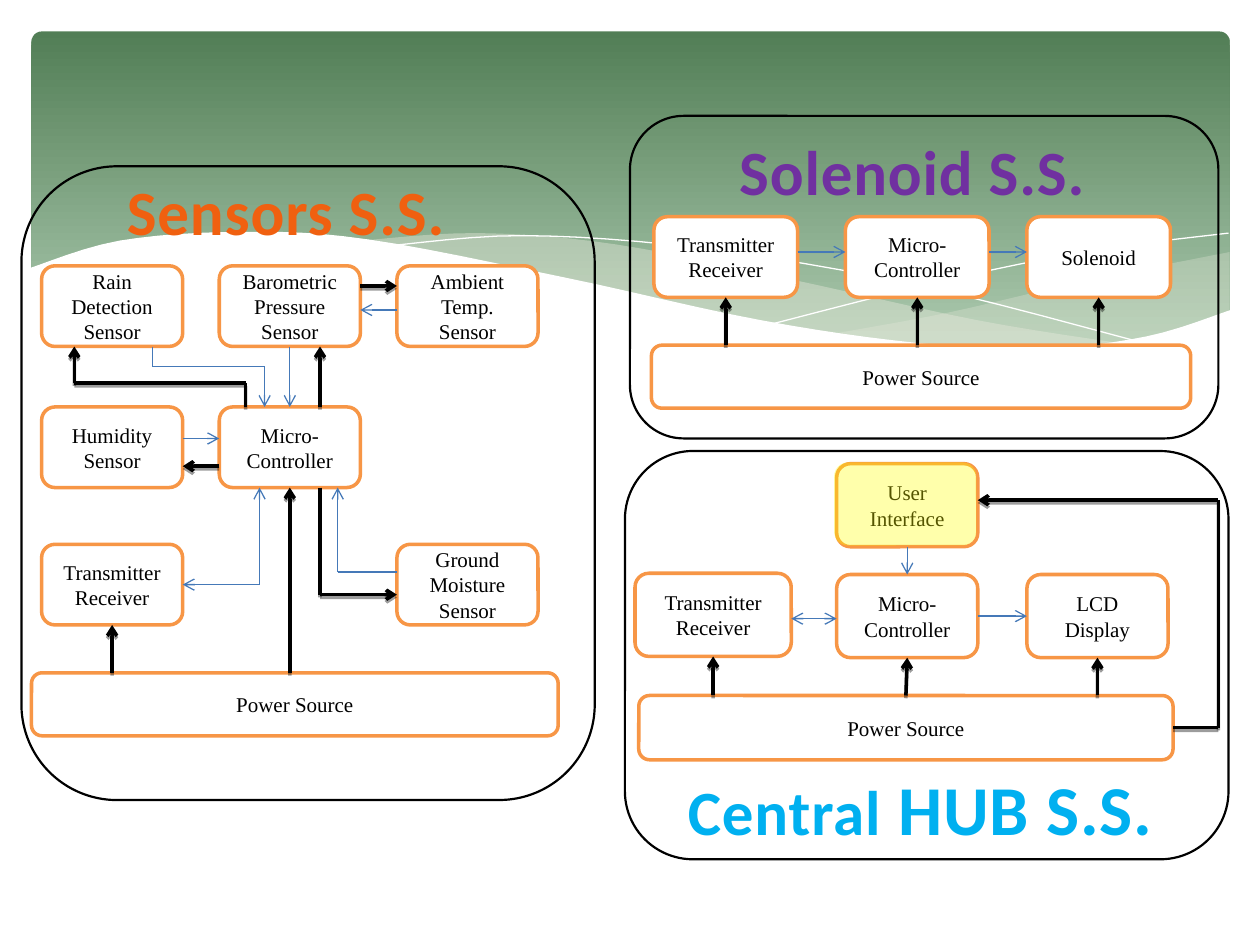
from lxml import etree
from pptx import Presentation
from pptx.dml.color import RGBColor
from pptx.enum.shapes import MSO_CONNECTOR, MSO_SHAPE
from pptx.enum.text import MSO_ANCHOR, MSO_AUTO_SIZE, PP_ALIGN
from pptx.oxml.ns import qn
from pptx.util import Cm, Pt

ROUNDED = MSO_SHAPE.ROUNDED_RECTANGLE
STRAIGHT = MSO_CONNECTOR.STRAIGHT
TOP, LEFT, BOTTOM, RIGHT = range(4)
OPPOSITE = {TOP: BOTTOM, BOTTOM: TOP, LEFT: RIGHT, RIGHT: LEFT}
ORANGE, BLACK, WHITE, BLUE = "F79646", "000000", "FFFFFF", "4579B8"

# All places are in inches: left, top, width, height.
BANNER = (0.25, 0.25, 9.51, 2.7)
BANNER_STOPS = [(0, "527E56"), (0.9, "AAC8AD")]

# Waves: smooth edges through a few points, fill (None for a line), opacity
WAVES = [
    ([[(9.76, 2), (8.61, 2.23), (7.53, 2.48), (6.61, 2.65)],
      [(6.61, 2.65), (7.45, 2.75), (8.35, 2.77), (9.13, 2.67), (9.76, 2.47)]], "EAEBDE", 29),
    ([[(2.86, 1.91), (3.8, 1.85), (4.89, 1.94), (6.29, 2.22), (7.75, 2.54), (8.93, 2.73)],
      [(8.93, 2.73), (7.96, 2.78), (6.65, 2.66), (4.49, 2.22), (2.86, 1.91)]], "EAEBDE", 40),
    ([[(3.09, 1.95), (4.16, 1.87), (5.56, 1.97), (7.27, 2.26), (9.07, 2.72)]], None, 100),
    ([[(6.13, 2.57), (7.48, 2.23), (8.66, 1.99), (9.75, 1.85)]], None, 100),
    ([[(0.23, 2.13), (0.95, 1.91), (1.93, 1.84), (2.92, 1.9), (4.47, 2.2), (6.03, 2.54),
       (7.26, 2.72), (8.23, 2.77), (9.1, 2.67), (9.77, 2.46)],
      [(9.77, 3.29), (0.23, 3.29)]], WHITE, 100),
]
CURVE_STEPS = 6

RADIO, MICRO, POWER = "Transmitter\nReceiver", "Micro-Controller", "Power Source"
SENSOR_COLUMNS = [0.33, 1.74, 3.15]
SENSOR_ROWS = [2.11, 3.23, 4.32]
SENSOR_SIZE = (1.12, 0.64)
SENSOR_GRID = [
    [("rain", "Rain Detection\nSensor"), ("barometer", "Barometric Pressure Sensor"),
     ("ambient", "Ambient Temp.\nSensor")],
    [("humidity", "Humidity\nSensor"), ("sensor micro", MICRO), None],
    [("sensor radio", RADIO), None, ("ground", "Ground Moisture\nSensor")],
]
OTHER_BOXES = [
    ("sensor power", POWER, (0.25, 5.34, 4.18, 0.5)),
    ("solenoid radio", RADIO, (5.19, 1.72, 1.14, 0.64)),
    ("solenoid micro", MICRO, (6.71, 1.72, 1.14, 0.64)),
    ("solenoid", "Solenoid", (8.15, 1.72, 1.14, 0.64)),
    ("solenoid power", POWER, (5.17, 2.74, 4.28, 0.5)),
    ("user", "User Interface", (6.64, 3.68, 1.12, 0.66)),
    ("hub micro", MICRO, (6.64, 4.56, 1.12, 0.66)),
    ("lcd", "LCD Display", (8.15, 4.56, 1.12, 0.66)),
    ("hub radio", RADIO, (5.04, 4.55, 1.24, 0.66)),
    ("hub power", POWER, (5.07, 5.52, 4.24, 0.51)),
]

POWER_LOOK = {"colour": BLACK, "width": 2, "shadow": True}
DATA_LOOK = {"colour": BLUE, "width": 0.75}
TWO_WAY_LOOK = {**DATA_LOOK, "two_way": True}

# Straight links: from, side it leaves by, to, shift from the middle of the target
LINKS = [
    (POWER_LOOK, [
        ("sensor power", TOP, "sensor radio", 0), ("sensor power", TOP, "sensor micro", 0),
        ("solenoid power", TOP, "solenoid radio", 0),
        ("solenoid power", TOP, "solenoid micro", 0), ("solenoid power", TOP, "solenoid", 0),
        ("hub power", TOP, "hub radio", 0), ("hub power", TOP, "hub micro", 0),
        ("hub power", TOP, "lcd", 0), ("sensor micro", LEFT, "humidity", 0.15),
        ("sensor micro", TOP, "barometer", 0.24), ("barometer", RIGHT, "ambient", -0.16)]),
    (DATA_LOOK, [
        ("barometer", BOTTOM, "sensor micro", 0), ("humidity", RIGHT, "sensor micro", -0.07),
        ("ambient", LEFT, "barometer", 0.03), ("solenoid radio", RIGHT, "solenoid micro", -0.04),
        ("solenoid micro", RIGHT, "solenoid", -0.04), ("hub micro", RIGHT, "lcd", 0),
        ("user", BOTTOM, "hub micro", 0)]),
    (TWO_WAY_LOOK, [("hub radio", RIGHT, "hub micro", 0.02)]),
]
# Bent routes: from, side, shift from its middle, then the x or y of each turn
BENT_ROUTES = [
    (POWER_LOOK, "sensor micro", BOTTOM, 0.24, [4.72, 3.15]),
    (POWER_LOOK, "sensor micro", TOP, -0.35, [3.04, 0.59, 2.75]),
    (POWER_LOOK, "hub power", RIGHT, 0, [9.67, 3.97, 7.76]),
    (DATA_LOOK, "rain", BOTTOM, 0.32, [2.91, 2.1, 3.23]),
    (DATA_LOOK, "ground", LEFT, -0.1, [2.68, 3.87]),
    (TWO_WAY_LOOK, "sensor radio", RIGHT, 0, [2.06, 3.87]),
]

# Headings: place, colour, runs of text and size
HEADINGS = [
    ((0.89, 1.32, 2.76, 0.68), "F06010", [("Sensors S.S.", 36)]),
    ((5.36, 6.03, 3.89, 0.74), "00B0F0", [("Central", 36), (" HUB S.S.", 40)]),
    ((5.76, 1, 2.96, 0.68), "7030A0", [("Solenoid S.S.", 36)]),
]
FRAMES = [(0.17, 1.32, 4.55, 5.03), (5, 0.92, 4.67, 2.56), (4.96, 3.58, 4.79, 3.24)]
HIGHLIGHT = (6.62, 3.67, 1.13, 0.66)


def lengths(values):
    return [Cm(value * 2.54) for value in values]


def smooth(points):
    """Return points along a Catmull-Rom curve; two points stay a straight line."""
    if len(points) == 2:
        return points
    padded = [points[0], *points, points[-1]]
    curve = [points[0]]
    for corners in zip(padded, padded[1:], padded[2:], padded[3:]):
        for step in range(1, CURVE_STEPS + 1):
            t = step / CURVE_STEPS
            curve.append(tuple(
                b + t * (c - a + t * (2 * a - 5 * b + 4 * c - d + t * (3 * (b - c) + d - a))) / 2
                for a, b, c, d in zip(*corners)))
    return curve


def paint(fill, colour, opacity=100):
    if colour is None:
        fill.background()
        return
    fill.solid()
    fill.fore_color.rgb = RGBColor.from_string(colour)
    if opacity < 100:
        rgb = fill._xPr.find(".//" + qn("a:srgbClr"))
        etree.SubElement(rgb, qn("a:alpha"), val=str(opacity * 1000))


def style(shape, fill=None, line=None, width=0, opacity=100):
    shape.shadow.inherit = False
    paint(shape.fill, fill, opacity)
    paint(shape.line.fill, line)
    if line:
        shape.line.width = Pt(width)
    return shape


def add_rounded(place, **look):
    return style(slide.shapes.add_shape(ROUNDED, *lengths(place)), **look)


def write(paragraph, text, font="Times New Roman", size=12, colour=BLACK, bold=False, spacing=0):
    """Add text to a paragraph; each newline is a line break."""
    for index, line in enumerate(text.split("\n")):
        if index:
            paragraph.add_line_break()
        run = paragraph.add_run()
        run.text = line
        run.font.name, run.font.size, run.font.bold = font, Pt(size), bold
        paint(run.font.fill, colour)
        if spacing:
            run._r.get_or_add_rPr().set("spc", str(spacing))
    paragraph.alignment = PP_ALIGN.CENTER


def side_point(name, side, shift=0):
    left, top, width, height = places[name]
    if side in (TOP, BOTTOM):
        return left + width / 2 + shift, top + height * (side == BOTTOM)
    return left + width * (side == RIGHT), top + height / 2 + shift


def add_line(start, end, colour, width, shadow=False, head=False, tail=False):
    connector = slide.shapes.add_connector(STRAIGHT, *lengths((*start, *end)))
    paint(connector.line.fill, colour)
    connector.line.width = Pt(width)
    for tag, wanted in (("a:headEnd", head), ("a:tailEnd", tail)):
        if wanted:
            etree.SubElement(connector.line._get_or_add_ln(), qn(tag), type="arrow")
    effects = etree.SubElement(connector._element.spPr, qn("a:effectLst"))
    if shadow:
        outer = etree.SubElement(effects, qn("a:outerShdw"), dist="20000", dir="5400000")
        rgb = etree.SubElement(outer, qn("a:srgbClr"), val=BLACK)
        etree.SubElement(rgb, qn("a:alpha"), val="38000")
    return connector


def add_link(source, side, target, shift, two_way=False, **look):
    end = side_point(target, OPPOSITE[side], shift)
    middle = side_point(source, side)
    start = (end[0], middle[1]) if side in (TOP, BOTTOM) else (middle[0], end[1])
    connector = add_line(start, end, head=two_way, tail=True, **look)
    if shift == 0:
        connector.end_connect(boxes[target], OPPOSITE[side])
        if max(abs(a - b) for a, b in zip(start, middle)) < 0.01:
            connector.begin_connect(boxes[source], side)


def add_bent_route(source, side, shift, turns, two_way=False, **look):
    start = side_point(source, side, shift)
    vertical = side in (TOP, BOTTOM)
    for index, turn in enumerate(turns):
        end = (start[0], turn) if vertical else (turn, start[1])
        connector = add_line(start, end, head=two_way and index == 0,
                             tail=index == len(turns) - 1, **look)
        if index == 0 and shift == 0:
            connector.begin_connect(boxes[source], side)
        start, vertical = end, not vertical


presentation = Presentation()
presentation.slide_width, presentation.slide_height = lengths((10, 7.5))
slide = presentation.slides.add_slide(presentation.slide_layouts[6])

banner = add_rounded(BANNER)
banner.adjustments[0] = 0.03
banner.fill.gradient()
banner.fill.gradient_angle = 270
for stop, (position, colour) in zip(banner.fill.gradient_stops, BANNER_STOPS):
    stop.position = position
    stop.color.rgb = RGBColor.from_string(colour)

for edges, fill, opacity in WAVES:
    first, *others = [lengths(point) for edge in edges for point in smooth(edge)]
    builder = slide.shapes.build_freeform(*first)
    builder.add_line_segments(others, close=fill is not None)
    style(builder.convert_to_shape(), fill=fill, opacity=opacity, line=None if fill else WHITE)

sensor_boxes = [(*cell, (left, top, *SENSOR_SIZE)) for top, row in zip(SENSOR_ROWS, SENSOR_GRID)
                for left, cell in zip(SENSOR_COLUMNS, row) if cell]
boxes, places = {}, {}
for name, text, place in sensor_boxes + OTHER_BOXES:
    box = add_rounded(place, fill=WHITE, line=ORANGE, width=2)
    box.text_frame.word_wrap = True
    box.text_frame.vertical_anchor = MSO_ANCHOR.MIDDLE
    write(box.text_frame.paragraphs[0], text)
    boxes[name], places[name] = box, place

for look, links in LINKS:
    for link in links:
        add_link(*link, **look)
for look, *route in BENT_ROUTES:
    add_bent_route(*route, **look)

for place, colour, runs in HEADINGS:
    frame = slide.shapes.add_textbox(*lengths(place)).text_frame
    frame.word_wrap = False
    frame.auto_size = MSO_AUTO_SIZE.SHAPE_TO_FIT_TEXT
    for text, size in runs:
        write(frame.paragraphs[0], text, font="Calibri", size=size, colour=colour,
              bold=True, spacing=50)

for place in FRAMES:
    add_rounded(place, line=BLACK, width=1.25)
add_rounded(HIGHLIGHT, fill="FFFF00", opacity=33)

presentation.save("out.pptx")
